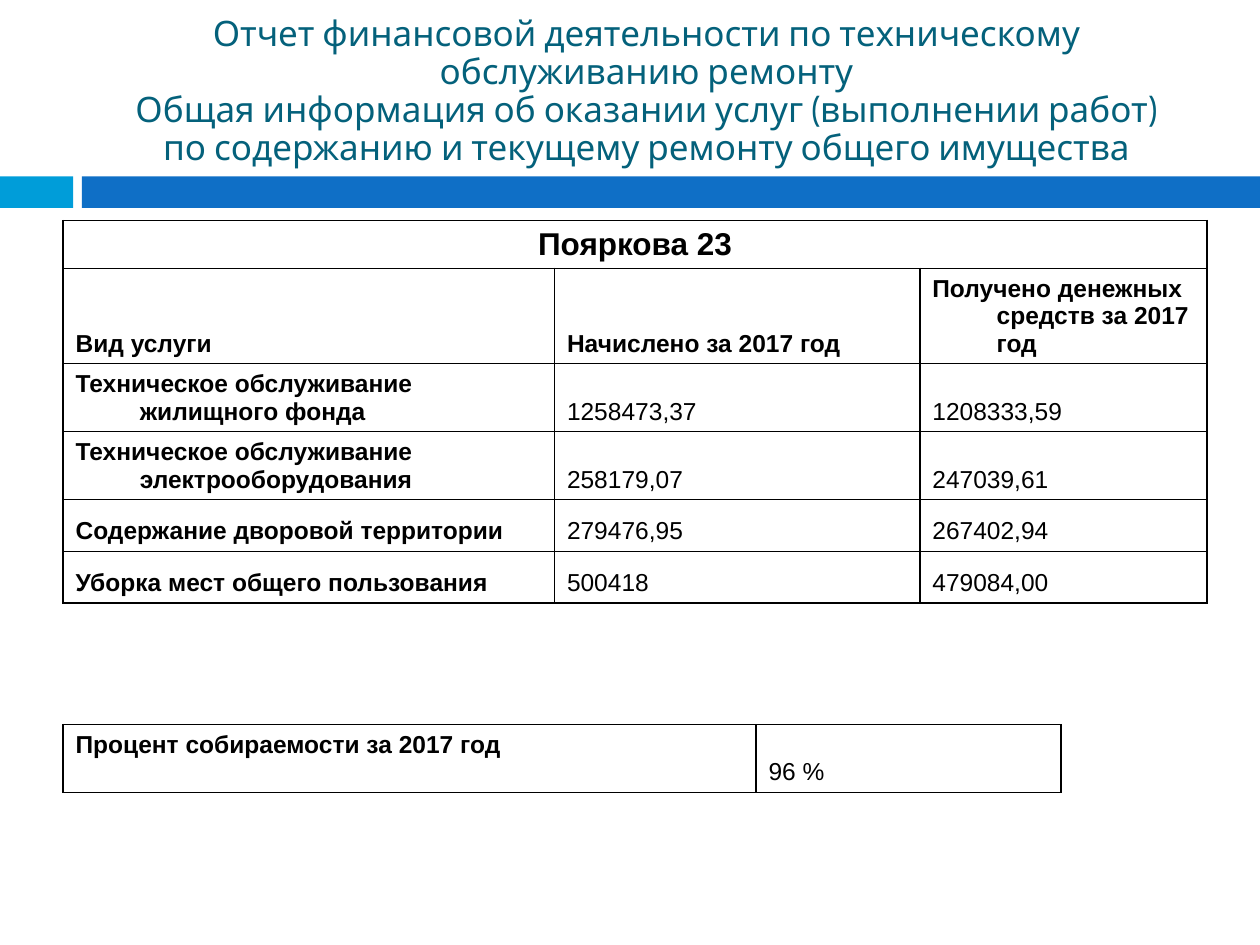
from lxml import etree
from pptx import Presentation
from pptx.dml.color import RGBColor
from pptx.enum import shapes, text
from pptx.oxml import ns
from pptx.util import Inches, Pt

TITLE = (
    "Отчет финансовой деятельности по техническому обслуживанию ремонту\v"
    "Общая информация об оказании услуг (выполнении работ)\v"
    "по содержанию и текущему ремонту общего имущества"
)
SERVICES = [
    ["Пояркова 23", "", ""],
    ["Вид услуги", "Начислено за 2017 год", "Получено денежных средств за 2017 год"],
    ["Техническое обслуживание жилищного фонда", "1258473,37", "1208333,59"],
    ["Техническое обслуживание электрооборудования", "258179,07", "247039,61"],
    ["Содержание дворовой территории", "279476,95", "267402,94"],
    ["Уборка мест общего пользования", "500418", "479084,00"],
]
COLLECTION = [["Процент собираемости за 2017 год", "96 %"]]


def color(value):
    return RGBColor.from_string(value)


def add_bar(page, left, width, fill):
    bar = page.shapes.add_shape(
        shapes.MSO_SHAPE.RECTANGLE, Inches(left), Inches(1.4), Inches(width), Inches(0.25)
    )
    bar.shadow.inherit = False
    bar.fill.solid()
    bar.fill.fore_color.rgb = color(fill)
    bar.line.fill.background()


def set_title(page):
    title = page.shapes.title
    title.left, title.top = Inches(0.67), Inches(0.33)
    title.width, title.height = Inches(8.92), Inches(1.08)
    frame = title.text_frame
    frame.text = TITLE
    frame.word_wrap = True
    frame.auto_size = text.MSO_AUTO_SIZE.NONE
    frame.vertical_anchor = text.MSO_ANCHOR.MIDDLE
    frame.margin_bottom = Inches(0.33)
    para = frame.paragraphs[0]
    para.alignment = text.PP_ALIGN.CENTER
    para.line_spacing = 0.9
    para.font.name = "Cabin"
    para.font.size = Pt(20)
    para.font.color.rgb = color("04617B")


def add_borders(cell):
    """Draw a thin black line on all four sides of the cell."""
    properties = cell._tc.get_or_add_tcPr()
    for index, side in enumerate(("lnL", "lnR", "lnT", "lnB")):
        line = etree.Element(ns.qn(f"a:{side}"), w=str(Pt(1)))
        fill = etree.SubElement(line, ns.qn("a:solidFill"))
        etree.SubElement(fill, ns.qn("a:srgbClr"), val="000000")
        properties.insert(index, line)


def format_cell(cell, words, bold, size=14):
    cell.text = words
    cell.fill.background()
    cell.vertical_anchor = text.MSO_ANCHOR.BOTTOM
    add_borders(cell)
    para = cell.text_frame.paragraphs[0]
    para.font.name = "Arial"
    para.font.size = Pt(size)
    para.font.bold = bold
    para.font.color.rgb = color("000000")
    indent = para._p.get_or_add_pPr()
    indent.set("marL", str(Inches(0.51)))
    indent.set("indent", str(Inches(-0.51)))


def add_grid(page, top, widths, heights, rows, header_rows=0):
    """Add a bordered table with bold header rows and a bold first column."""
    frame = page.shapes.add_table(
        len(rows), len(widths), Inches(0.5), Inches(top),
        Inches(sum(widths)), Inches(sum(heights)),
    )
    table = frame.table
    table.first_row = table.horz_banding = False
    for column, width in zip(table.columns, widths):
        column.width = Inches(width)
    for row, height in zip(table.rows, heights):
        row.height = Inches(height)
    for r, row in enumerate(rows):
        for c, words in enumerate(row):
            format_cell(table.cell(r, c), words, bold=r < header_rows or c == 0)
    return table


def main():
    deck = Presentation()
    deck.slide_width, deck.slide_height = Inches(10), Inches(7.5)
    page = deck.slides.add_slide(deck.slide_layouts[5])
    add_bar(page, 0, 0.58, "009DD9")
    add_bar(page, 0.65, 9.35, "0F6FC6")
    set_title(page)

    services = add_grid(
        page, 1.75, [3.9, 2.9, 2.28], [0.38, 0.75, 0.54, 0.54, 0.41, 0.41],
        SERVICES, header_rows=2,
    )
    heading = services.cell(0, 0)
    heading.merge(services.cell(0, 2))
    heading_para = heading.text_frame.paragraphs[0]
    heading_para.alignment = text.PP_ALIGN.CENTER
    heading_para.font.size = Pt(18)

    collection = add_grid(page, 5.75, [5.5, 2.42], [0.54], COLLECTION)
    collection.cell(0, 0).vertical_anchor = text.MSO_ANCHOR.TOP
    deck.save("out.pptx")


if __name__ == "__main__":
    main()
